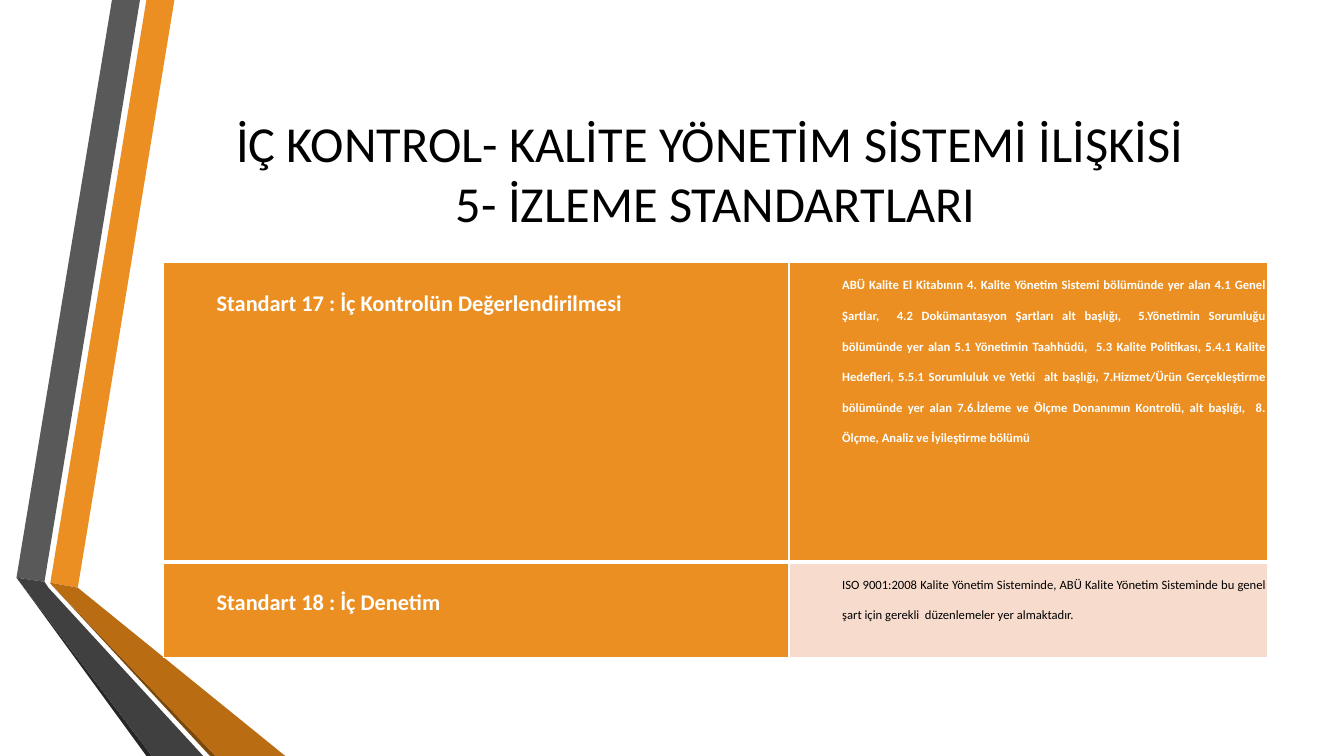
from dataclasses import dataclass

from lxml.etree import SubElement
from pptx import Presentation
from pptx.dml.color import RGBColor
from pptx.enum.text import MSO_ANCHOR, PP_ALIGN
from pptx.oxml.ns import qn
from pptx.util import Pt


@dataclass(frozen=True)
class Theme:
    font: str = "Calibri"
    orange: str = "EB8F22"
    dark_orange: str = "B96C11"
    brown: str = "7B480B"
    gray: str = "595959"
    dark_gray: str = "404040"
    charcoal: str = "262626"
    peach: str = "F7DBCD"
    white: str = "FFFFFF"
    black: str = "000000"
    title_size: float = 36
    standard_size: float = 16
    detail_size: float = 9


THEME = Theme()

TITLE = "İÇ KONTROL- KALİTE YÖNETİM SİSTEMİ İLİŞKİSİ \v5- İZLEME STANDARTLARI"
# Each cell: text, size, text colour, bold, fill
ROWS = [
    [
        ("Standart 17 : İç Kontrolün Değerlendirilmesi",
         THEME.standard_size, THEME.white, True, THEME.orange),
        ("ABÜ Kalite El Kitabının 4. Kalite Yönetim Sistemi bölümünde yer alan "
         "4.1 Genel Şartlar,  4.2 Dokümantasyon Şartları alt başlığı,  "
         "5.Yönetimin Sorumluğu bölümünde yer alan 5.1 Yönetimin Taahhüdü,  "
         "5.3 Kalite Politikası, 5.4.1 Kalite Hedefleri, 5.5.1 Sorumluluk ve Yetki  "
         "alt başlığı, 7.Hizmet/Ürün Gerçekleştirme bölümünde yer alan 7.6.İzleme ve "
         "Ölçme Donanımın Kontrolü, alt başlığı,  8. Ölçme, Analiz ve İyileştirme bölümü",
         THEME.detail_size, THEME.white, True, THEME.orange),
    ],
    [
        ("Standart 18 : İç Denetim",
         THEME.standard_size, THEME.white, True, THEME.orange),
        ("ISO 9001:2008 Kalite Yönetim Sisteminde, ABÜ Kalite Yönetim Sisteminde "
         "bu genel şart için gerekli  düzenlemeler yer almaktadır.",
         THEME.detail_size, THEME.black, False, THEME.peach),
    ],
]
RIBBONS = [
    (THEME.orange, [(36, 416.2), (55.6, 419.8), (124.6, 0), (104.6, 0)]),
    (THEME.gray, [(100, 0), (80, 0), (11.8, 412.6), (31.8, 415.6)]),
    (THEME.charcoal, [(11.8, 412.6), (104.6, 540), (108.6, 540)]),
    (THEME.brown, [(36, 416.8), (150, 540), (154, 540)]),
    (THEME.dark_orange,
     [(36, 416.2), (36, 416.8), (154, 540), (203.8, 540), (55.6, 419.8)]),
    (THEME.dark_gray,
     [(11.8, 412.6), (108.6, 540), (145.2, 540), (34.6, 419.8), (31.8, 415.6)]),
]

SLIDE_WIDTH, SLIDE_HEIGHT = 960, 540
LEFT, WIDTH = 116.8, 789
TITLE_TOP, TITLE_HEIGHT = 54, 138
TABLE_TOP = 187.5
COLUMN_WIDTHS = [446.8, WIDTH - 446.8]
ROW_HEIGHTS = [213.8, 68.4]
CELL_INDENT = 36
CELL_MARGIN = 2
THIN, THICK = 1, 3


def color(value):
    return RGBColor.from_string(value)


def style_paragraph(paragraph, size, text_color, bold, alignment):
    paragraph.alignment = alignment
    font = paragraph.font
    font.name, font.size, font.bold = THEME.font, Pt(size), bold
    font.color.rgb = color(text_color)


def add_ribbon(slide, fill, points):
    corners = [(Pt(x), Pt(y)) for x, y in points]
    builder = slide.shapes.build_freeform(*corners[0])
    builder.add_line_segments(corners[1:], close=True)
    shape = builder.convert_to_shape()
    shape.shadow.inherit = False
    shape.fill.solid()
    shape.fill.fore_color.rgb = color(fill)
    shape.line.fill.background()


def add_title(slide):
    title = slide.shapes.title
    title.left, title.top = Pt(LEFT), Pt(TITLE_TOP)
    title.width, title.height = Pt(WIDTH), Pt(TITLE_HEIGHT)
    frame = title.text_frame
    frame.text = TITLE
    frame.word_wrap = True
    frame.vertical_anchor = MSO_ANCHOR.MIDDLE
    style_paragraph(frame.paragraphs[0], THEME.title_size, THEME.black,
                    False, PP_ALIGN.CENTER)


def set_borders(cell, top, bottom):
    """Draw white cell borders; must run before the cell is filled."""
    properties = cell._tc.get_or_add_tcPr()
    for side, width in (("L", THIN), ("R", THIN), ("T", top), ("B", bottom)):
        line = SubElement(properties, qn(f"a:ln{side}"), w=str(Pt(width)))
        fill = SubElement(line, qn("a:solidFill"))
        SubElement(fill, qn("a:srgbClr"), val=THEME.white)


def fill_cell(cell, text, size, text_color, bold, fill):
    cell.fill.solid()
    cell.fill.fore_color.rgb = color(fill)
    cell.margin_left = cell.margin_right = Pt(CELL_MARGIN)
    cell.margin_top = cell.margin_bottom = 0
    cell.vertical_anchor = MSO_ANCHOR.TOP
    cell.text = text
    paragraph = cell.text_frame.paragraphs[0]
    style_paragraph(paragraph, size, text_color, bold, PP_ALIGN.JUSTIFY)
    paragraph.line_spacing = 2.0
    paragraph_properties = paragraph._p.get_or_add_pPr()
    paragraph_properties.set("marL", str(Pt(CELL_INDENT)))
    paragraph_properties.set("indent", "0")


def add_standards_table(slide):
    table = slide.shapes.add_table(
        len(ROWS), len(COLUMN_WIDTHS), Pt(LEFT), Pt(TABLE_TOP),
        Pt(WIDTH), Pt(sum(ROW_HEIGHTS))).table
    for column, width in zip(table.columns, COLUMN_WIDTHS):
        column.width = Pt(width)
    for row_index, (row, height) in enumerate(zip(ROWS, ROW_HEIGHTS)):
        table.rows[row_index].height = Pt(height)
        top = THICK if row_index > 0 else THIN
        bottom = THICK if row_index < len(ROWS) - 1 else THIN
        for column_index, content in enumerate(row):
            cell = table.cell(row_index, column_index)
            set_borders(cell, top, bottom)
            fill_cell(cell, *content)


def main():
    presentation = Presentation()
    presentation.slide_width = Pt(SLIDE_WIDTH)
    presentation.slide_height = Pt(SLIDE_HEIGHT)
    title_only = presentation.slide_layouts[5]
    slide = presentation.slides.add_slide(title_only)
    for fill, points in RIBBONS:
        add_ribbon(slide, fill, points)
    add_title(slide)
    add_standards_table(slide)
    presentation.save("out.pptx")


if __name__ == "__main__":
    main()
